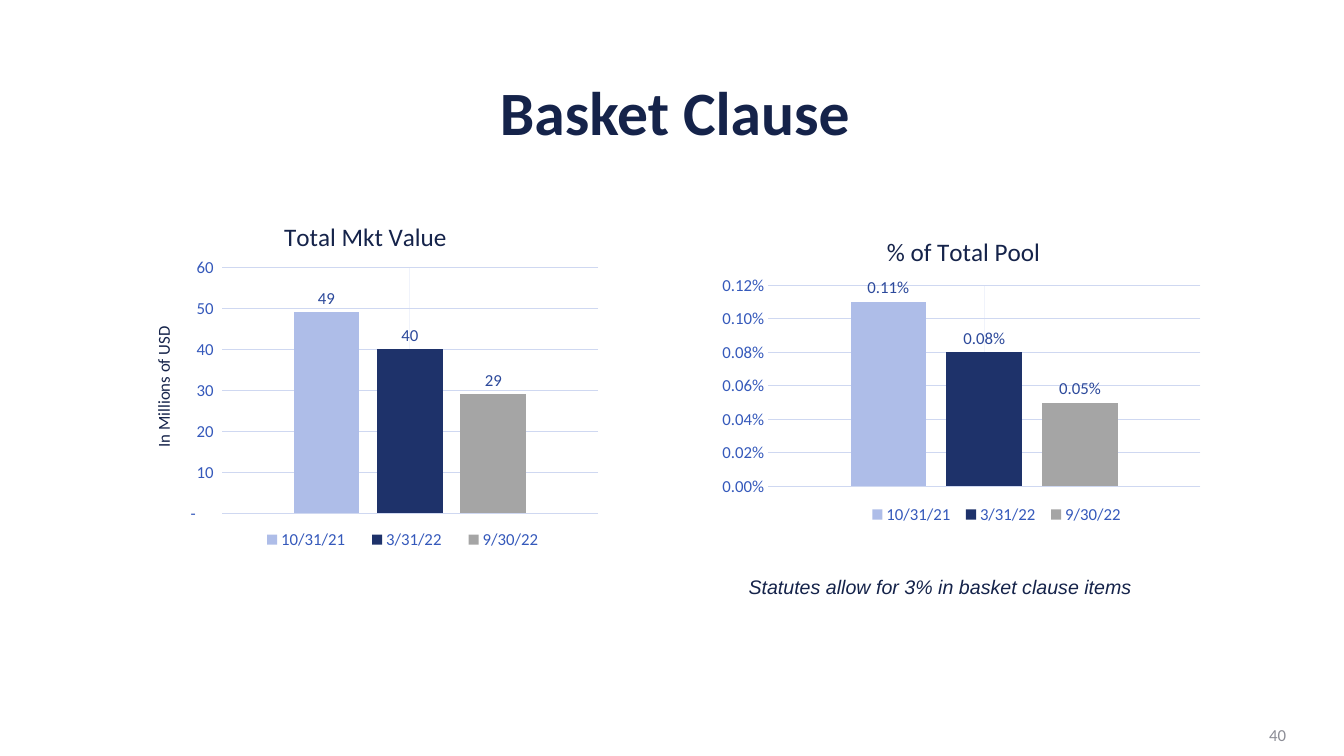
"""Build the Basket Clause slide with its two column charts."""
from pptx import Presentation
from pptx.chart.data import CategoryChartData
from pptx.dml.color import RGBColor
from pptx.enum.chart import XL_CHART_TYPE as ChartType
from pptx.enum.chart import XL_LABEL_POSITION as LabelPosition
from pptx.enum.chart import XL_LEGEND_POSITION as LegendPosition
from pptx.enum.chart import XL_TICK_MARK as TickMark
from pptx.enum.text import MSO_ANCHOR as Anchor
from pptx.enum.text import PP_ALIGN as Align
from pptx.oxml import parse_xml
from pptx.oxml.ns import nsdecls
from pptx.util import Cm, Pt

COLORS = {
    "navy": "15234A", "muted": "8C8D96", "axis": "3559BB", "label": "2C499B",
    "grid": "CFD8F1", "faint": "F0F3FB",
}
DATES = {"10/31/21": "AEBDE8", "3/31/22": "1E326A", "9/30/22": "A5A5A5"}
MILLIONS = '_(* #,##0_);_(* \\(#,##0\\);_(* "-"??_);_('

TITLE = ("Basket Clause", (2.41, 1.07, 29.21, 3.68))
NOTES = [
    dict(text="Statutes allow for 3% in basket clause items",
         at=(18.26, 14.35, 10.87, 0.86), align=Align.CENTER, anchor=Anchor.TOP,
         font=("Arial", 14, "navy"), italic=True),
    dict(text="40", at=(25.04, 18.01, 7.62, 1.02), align=Align.RIGHT,
         anchor=Anchor.MIDDLE, font=("Calibri", 12, "muted"), italic=False),
]
CHARTS = [
    dict(title="Total Mkt Value", at=(3.15, 4.95, 12.17, 9.4),
         values=(49, 40, 29), top=60, step=10, number_format=MILLIONS,
         axis_title="In Millions of USD",
         layout={"c:plotArea": (0.2, 0.19, 0.78, 0.66),
                 "c:title": (0.32, 0.05),
                 "c:legend": (0.25, 0.88, 0.65, 0.08),
                 "c:plotArea/c:valAx/c:title": (0.05, 0.34)}),
    dict(title="% of Total Pool", at=(17.98, 5.28, 12.52, 8.31),
         values=(0.0011, 0.0008, 0.0005), top=0.0012, step=0.0002,
         number_format="0.00%", axis_title=None,
         layout={"c:plotArea": (0.11, 0.23, 0.87, 0.61),
                 "c:title": (0.34, 0.06),
                 "c:legend": (0.3, 0.88, 0.54, 0.09)}),
]


def rgb(name):
    return RGBColor.from_string(COLORS.get(name, name))


def style(font, face, size, color):
    font.name, font.size, font.bold = face, Pt(size), False
    font.color.rgb = rgb(color)


def place(chart, route, fractions):
    """Pin one chart part at fractions of the chart's size."""
    part = chart.element.xpath("c:chart/" + route)[0]
    for old in part.xpath("c:layout"):
        part.remove(old)
    target = '<c:layoutTarget val="inner"/>' if route == "c:plotArea" else ""
    modes = "".join(f'<c:{axis}Mode val="edge"/>' for axis in "xy")
    sizes = "".join(f'<c:{key} val="{value}"/>' for key, value in zip("xywh", fractions))
    layout = parse_xml(f'<c:layout {nsdecls("c")}><c:manualLayout>{target}{modes}{sizes}'
                       "</c:manualLayout></c:layout>")
    part.insert(0 if target else 1, layout)


def add_title(holder, text, size):
    holder.text_frame.text = text
    style(holder.text_frame.paragraphs[0].runs[0].font, "Calibri", size, "navy")


def format_axes(chart, item):
    categories, values = chart.category_axis, chart.value_axis
    categories.visible = False
    categories.has_minor_gridlines = True
    faint_grid = chart.element.xpath(".//c:catAx/c:minorGridlines")[0]
    faint_grid.append(parse_xml(
        f'<c:spPr {nsdecls("c", "a")}><a:ln w="9525"><a:solidFill>'
        f'<a:srgbClr val="{COLORS["faint"]}"/></a:solidFill></a:ln></c:spPr>'))
    values.minimum_scale, values.maximum_scale = 0, item["top"]
    values.major_unit = item["step"]
    values.major_tick_mark = values.minor_tick_mark = TickMark.NONE
    values.format.line.fill.background()
    grid = values.major_gridlines.format.line
    grid.color.rgb, grid.width = rgb("grid"), Pt(0.75)
    values.tick_labels.number_format = item["number_format"]
    values.tick_labels.number_format_is_linked = False
    style(values.tick_labels.font, "Calibri", 12, "axis")
    if item["axis_title"]:
        add_title(values.axis_title, item["axis_title"], 12)
        body = chart.element.xpath(".//c:valAx/c:title//a:bodyPr")[0]
        body.set("rot", "-5400000")
        body.set("vert", "horz")


def add_column_chart(slide, item):
    data = CategoryChartData(number_format=item["number_format"])
    data.categories = ["1"]
    for date, value in zip(DATES, item["values"]):
        data.add_series(date, [value])
    chart = slide.shapes.add_chart(
        ChartType.COLUMN_CLUSTERED, *map(Cm, item["at"]), data).chart
    style(chart.font, "Calibri", 10, "navy")
    add_title(chart.chart_title, item["title"], 18)
    chart.has_legend = True
    chart.legend.position = LegendPosition.BOTTOM
    chart.legend.include_in_layout = False
    style(chart.legend.font, "Calibri", 12, "axis")
    format_axes(chart, item)
    plot = chart.plots[0]
    plot.gap_width, plot.overlap, plot.vary_by_categories = 219, -27, False
    for series, color in zip(plot.series, DATES.values()):
        series.format.fill.solid()
        series.format.fill.fore_color.rgb = rgb(color)
        labels = series.data_labels
        labels.show_value = True
        labels.position = LabelPosition.OUTSIDE_END
        labels.number_format = item["number_format"]
        labels.number_format_is_linked = False
        style(labels.font, "Calibri", 12, "label")
    for route, fractions in item["layout"].items():
        place(chart, route, fractions)


def add_note(slide, note):
    frame = slide.shapes.add_textbox(*map(Cm, note["at"])).text_frame
    frame.word_wrap, frame.vertical_anchor = True, note["anchor"]
    para = frame.paragraphs[0]
    para.text, para.alignment = note["text"], note["align"]
    span = para.runs[0]
    style(span.font, *note["font"])
    span.font.italic = note["italic"]


def main():
    deck = Presentation()
    deck.slide_width, deck.slide_height = Cm(33.87), Cm(19.05)
    page = deck.slides.add_slide(deck.slide_layouts[5])
    heading = page.shapes.title
    text, place_at = TITLE
    heading.left, heading.top, heading.width, heading.height = map(Cm, place_at)
    add_title(heading, text, 44)
    heading.text_frame.vertical_anchor = Anchor.MIDDLE
    para = heading.text_frame.paragraphs[0]
    para.alignment, para.line_spacing = Align.CENTER, 0.9
    para.runs[0].font.bold = True
    for note in NOTES:
        add_note(page, note)
    for item in CHARTS:
        add_column_chart(page, item)
    deck.save("out.pptx")


if __name__ == "__main__":
    main()
